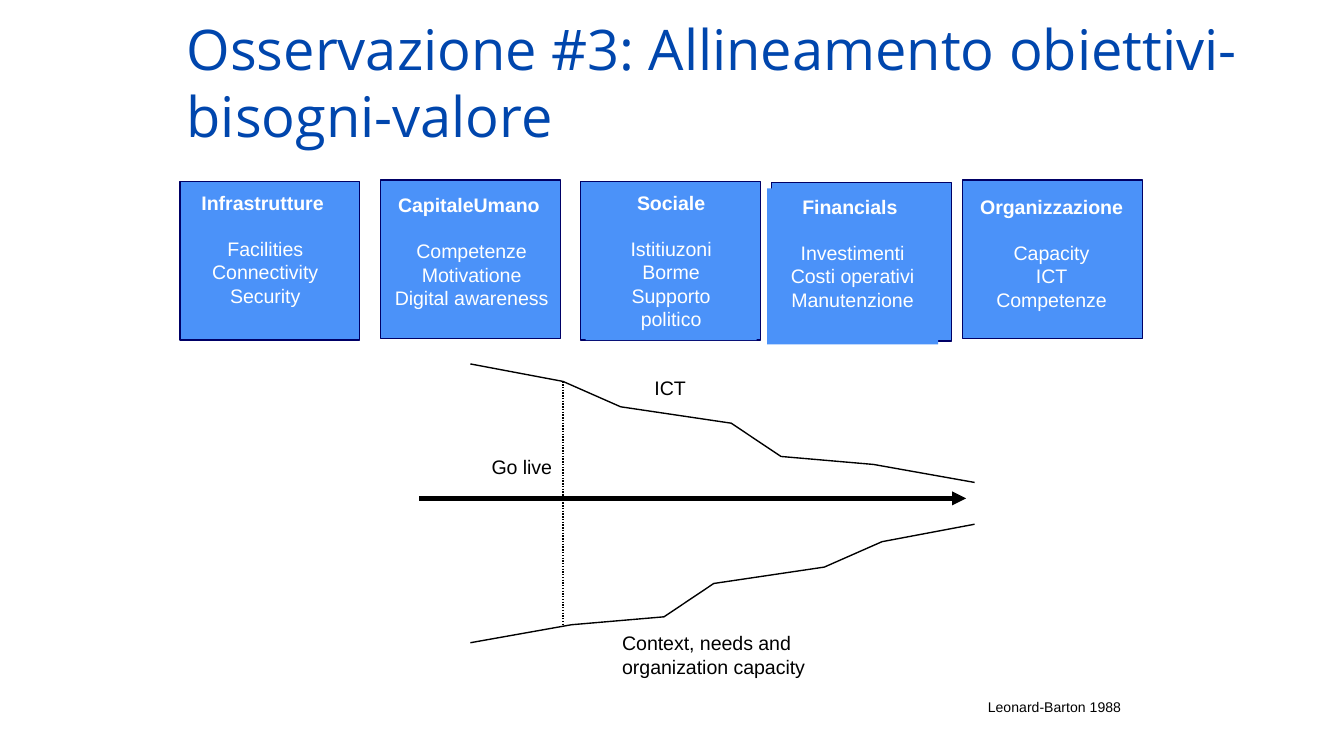
from dataclasses import dataclass

from lxml.etree import SubElement
from pptx import Presentation
from pptx.dml.color import RGBColor
from pptx.enum.dml import MSO_LINE
from pptx.enum.shapes import MSO_CONNECTOR, MSO_SHAPE
from pptx.enum.text import MSO_ANCHOR, PP_ALIGN
from pptx.oxml.ns import qn
from pptx.util import Cm, Pt


@dataclass(frozen=True)
class Theme:
    title_font: str = "Open Sans"
    body_font: str = "Arial"
    title_color: RGBColor = RGBColor(0x00, 0x46, 0xAD)
    card_fill: RGBColor = RGBColor(0x4B, 0x92, 0xF9)
    card_line: RGBColor = RGBColor(0x00, 0x00, 0x66)
    white: RGBColor = RGBColor(0xFF, 0xFF, 0xFF)
    black: RGBColor = RGBColor(0x00, 0x00, 0x00)
    title_size: float = 30
    body_size: float = 10.5
    source_size: float = 7.5
    heading_gap: float = 12
    thin: float = 0.75
    thick: float = 2.5


@dataclass(frozen=True)
class Box:
    left: float
    top: float
    width: float
    height: float

    def lengths(self) -> tuple:
        return Cm(self.left), Cm(self.top), Cm(self.width), Cm(self.height)


@dataclass(frozen=True)
class Card:
    heading: str
    items: tuple
    left: float
    top: float
    label: Box
    filled: bool = False


@dataclass(frozen=True)
class Note:
    text: str
    box: Box
    size: float


THEME = Theme()
CARD_WIDTH, CARD_HEIGHT = 3.4, 3.0

CARDS = (
    Card("Infrastrutture ", ("Facilities", "Connectivity", "Security"),
         3.4, 3.43, Box(3.4, 3.48, 3.23, 2.49)),
    Card("CapitaleUmano ", ("Competenze", "Motivatione", "Digital awareness"),
         7.19, 3.4, Box(6.83, 3.53, 4.17, 2.49)),
    Card("Sociale", ("Istitiuzoni", "Borme", "Supporto politico"),
         10.97, 3.43, Box(11.07, 3.48, 3.23, 2.95), True),
    Card("Financials ", ("Investimenti", "Costi operativi", "Manutenzione"),
         14.58, 3.45, Box(14.5, 3.56, 3.23, 2.95), True),
    Card("Organizzazione ", ("Capacity", "ICT", "Competenze"),
         18.19, 3.4, Box(18.26, 3.56, 3.23, 2.49)),
)

NOTES = (
    Note("Context, needs and organization capacity", Box(11.51, 11.81, 5.08, 1.14), THEME.body_size),
    Note("ICT", Box(12.12, 6.98, 4.6, 0.71), THEME.body_size),
    Note("Go live", Box(9.04, 8.48, 2.06, 0.71), THEME.body_size),
    Note("Leonard-Barton 1988", Box(18.42, 13.08, 3.33, 0.58), THEME.source_size),
)

# The lower curve runs through the same steps from right to left
CURVE_LEFT, CURVE_RIGHT = 8.89, 18.42
UPPER_TOP, LOWER_TOP = 6.88, 9.91
CURVE_STEPS = ((0, 0), (1.75, 0.33), (2.84, 0.81), (4.93, 1.12),
               (5.87, 1.75), (7.62, 1.9), (9.53, 2.24))


def style(paragraph, size: float, color: RGBColor, font: str = THEME.body_font,
          bold: bool = False) -> None:
    paragraph.font.name = font
    paragraph.font.size = Pt(size)
    paragraph.font.color.rgb = color
    paragraph.font.bold = bold


def add_rectangle(slide, box: Box, outlined: bool):
    shape = slide.shapes.add_shape(MSO_SHAPE.RECTANGLE, *box.lengths())
    shape.shadow.inherit = False
    shape.fill.solid()
    shape.fill.fore_color.rgb = THEME.card_fill
    if outlined:
        shape.line.color.rgb = THEME.card_line
        shape.line.width = Pt(THEME.thin)
    else:
        shape.line.fill.background()
    return shape


def add_card_label(slide, card: Card) -> None:
    if card.filled:
        shape = add_rectangle(slide, card.label, outlined=False)
    else:
        shape = slide.shapes.add_textbox(*card.label.lengths())
    frame = shape.text_frame
    frame.word_wrap = True
    frame.vertical_anchor = MSO_ANCHOR.TOP
    frame.text = "\n".join((card.heading, *card.items))
    for index, paragraph in enumerate(frame.paragraphs):
        paragraph.alignment = PP_ALIGN.CENTER
        style(paragraph, THEME.body_size, THEME.white, bold=index == 0)
    frame.paragraphs[1].space_before = Pt(THEME.heading_gap)


def add_note(slide, note: Note) -> None:
    frame = slide.shapes.add_textbox(*note.box.lengths()).text_frame
    frame.word_wrap = True
    frame.text = note.text
    style(frame.paragraphs[0], note.size, THEME.black)


def add_title(slide, text: str) -> None:
    frame = slide.shapes.add_textbox(*Box(3.53, 0.25, 20.27, 2.57).lengths()).text_frame
    frame.word_wrap = True
    frame.vertical_anchor = MSO_ANCHOR.BOTTOM
    frame.margin_left = frame.margin_right = frame.margin_top = frame.margin_bottom = 0
    frame.text = text
    style(frame.paragraphs[0], THEME.title_size, THEME.title_color, THEME.title_font)


def add_line(slide, start: tuple, end: tuple, width: float):
    connector = slide.shapes.add_connector(
        MSO_CONNECTOR.STRAIGHT, *(Cm(value) for value in (*start, *end)))
    connector.line.color.rgb = THEME.black
    connector.line.width = Pt(width)
    SubElement(connector.element.spPr, qn("a:effectLst"))
    return connector


def add_curve(slide, points: list) -> None:
    start, *others = [(Cm(x), Cm(y)) for x, y in points]
    builder = slide.shapes.build_freeform(*start)
    builder.add_line_segments(others, close=False)
    shape = builder.convert_to_shape()
    shape.shadow.inherit = False
    shape.fill.background()
    shape.line.color.rgb = THEME.black
    shape.line.width = Pt(THEME.thin)


def main() -> None:
    presentation = Presentation()
    presentation.slide_width, presentation.slide_height = Cm(25.4), Cm(14.29)
    slide = presentation.slides.add_slide(presentation.slide_layouts[6])

    add_title(slide, "Osservazione #3: Allineamento obiettivi-bisogni-valore")

    # Cards, then their labels on top
    for card in CARDS:
        add_rectangle(slide, Box(card.left, card.top, CARD_WIDTH, CARD_HEIGHT), outlined=True)
    for card in CARDS:
        add_card_label(slide, card)

    # Time arrow
    arrow = add_line(slide, (7.92, 9.42), (18.26, 9.42), THEME.thick)
    SubElement(arrow.line.fill._xPr, qn("a:tailEnd"), type="triangle")

    # Converging curves and the go-live mark
    add_curve(slide, [(CURVE_LEFT + x, UPPER_TOP + y) for x, y in CURVE_STEPS])
    add_curve(slide, [(CURVE_RIGHT - x, LOWER_TOP + y) for x, y in CURVE_STEPS])
    go_live = add_line(slide, (10.64, 7.21), (10.64, 11.81), THEME.thin)
    go_live.line.dash_style = MSO_LINE.ROUND_DOT

    # Notes and source
    for note in NOTES:
        add_note(slide, note)

    presentation.save("out.pptx")


if __name__ == "__main__":
    main()
